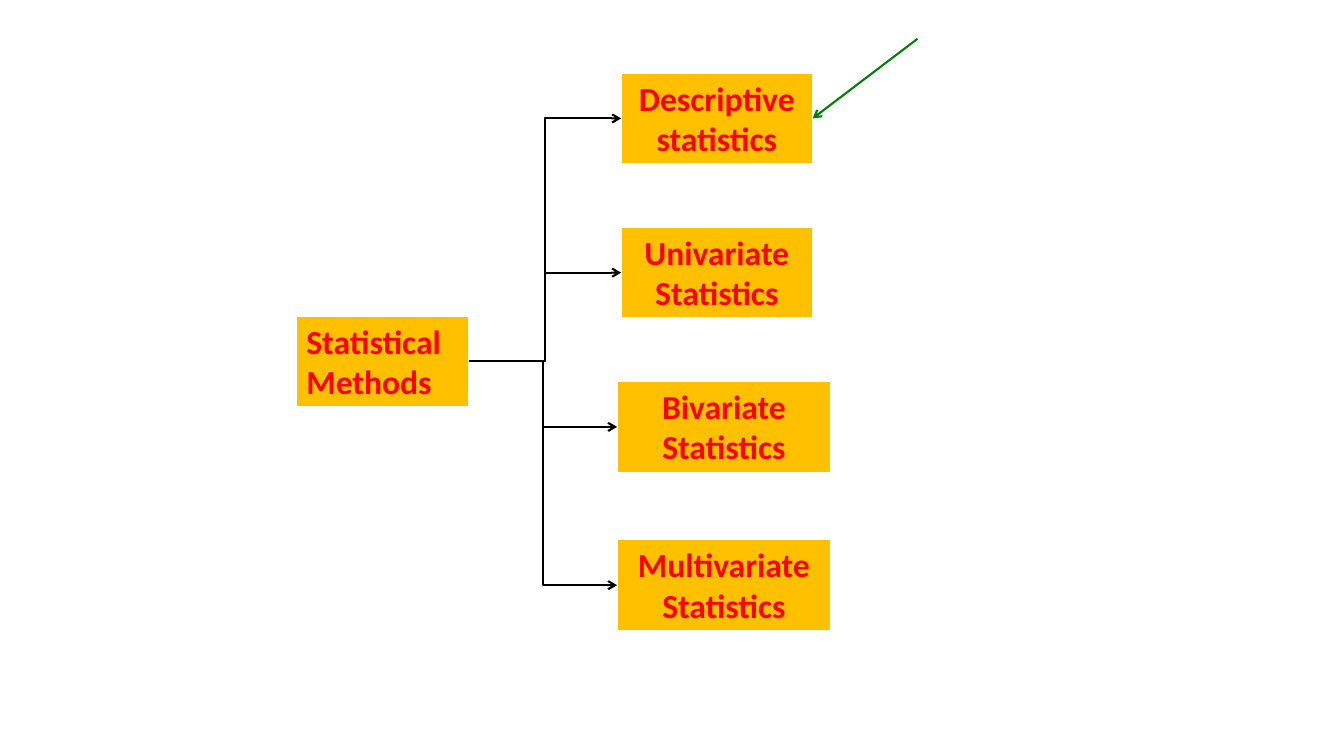
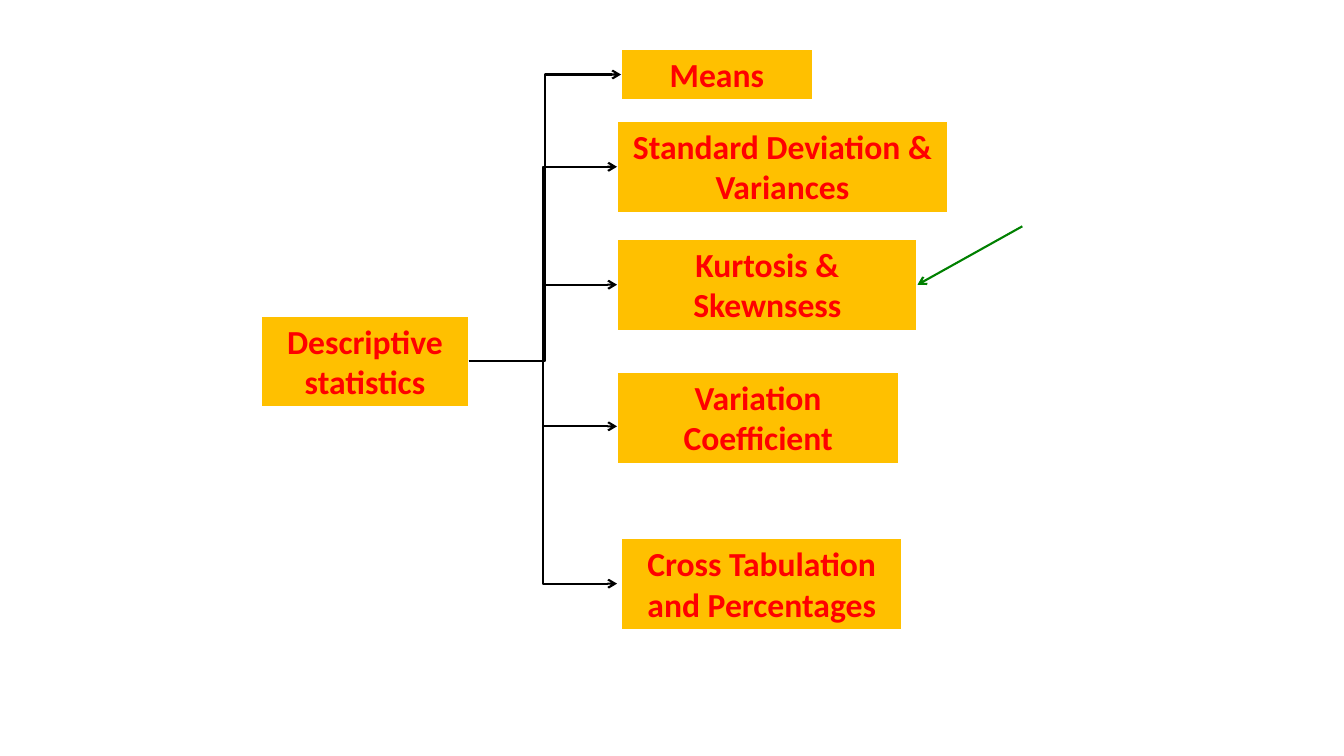
from dataclasses import dataclass
from typing import Optional

from lxml.etree import SubElement
from pptx import Presentation
from pptx.dml.color import RGBColor
from pptx.enum.shapes import MSO_CONNECTOR, MSO_SHAPE
from pptx.enum.text import MSO_ANCHOR, MSO_AUTO_SIZE, PP_ALIGN
from pptx.oxml.ns import qn
from pptx.util import Inches, Pt

AMBER, RED, WHITE, BLACK, GREEN = "FFC000", "FF0000", "FFFFFF", "000000", "008000"
TOP, LEFT, RIGHT = 0, 1, 3
LINE_WIDTH = Pt(1.5)
LABEL_FONT = {"name": "Calibri", "size": Pt(24), "bold": True}
LABEL_FRAME = {
    "word_wrap": True,
    "auto_size": MSO_AUTO_SIZE.SHAPE_TO_FIT_TEXT,
    "vertical_anchor": MSO_ANCHOR.TOP,
}


@dataclass
class Node:
    """A labelled box, with offsets from the corner of its tree."""
    label: str
    x: float
    y: float
    width: float
    height: float = 0.91
    align: PP_ALIGN = PP_ALIGN.CENTER
    tip: Optional[tuple] = None


def set_color(color_format, value):
    """Give a colour format a hex colour."""
    color_format.rgb = RGBColor.from_string(value)


def apply_format(target, values):
    """Set each attribute named in a dict of format values."""
    for name, value in values.items():
        setattr(target, name, value)


def add_node(slide, node, left, top):
    """Draw one labelled box of a tree whose corner is at left, top."""
    box = slide.shapes.add_shape(
        MSO_SHAPE.RECTANGLE, Inches(left + node.x), Inches(top + node.y),
        Inches(node.width), Inches(node.height))
    box.shadow.inherit = False
    box.fill.solid()
    set_color(box.fill.fore_color, AMBER)
    set_color(box.line.color, WHITE)
    box.line.width = LINE_WIDTH
    apply_format(box.text_frame, LABEL_FRAME)
    paragraph = box.text_frame.paragraphs[0]
    paragraph.alignment = node.align
    run = paragraph.add_run()
    run.text = node.label
    apply_format(run.font, LABEL_FONT)
    set_color(run.font.color, RED)
    return box


def add_arrow(slide, route, start, end, color):
    """Draw an open-headed arrow between two points given in EMU."""
    arrow = slide.shapes.add_connector(route, *start, *end)
    set_color(arrow.line.color, color)
    arrow.line.width = LINE_WIDTH
    properties = arrow.line._get_or_add_ln()
    SubElement(properties, qn("a:tailEnd"), type="arrow")
    SubElement(arrow._element.spPr, qn("a:effectLst"))
    return arrow


def side_middle(box, side):
    """Return the middle of a box's left or right side."""
    return box.left + (box.width if side == RIGHT else 0), box.top + box.height // 2


def add_branch(slide, root_box, branch_box, tip):
    """Lead an elbow arrow from the root to a branch, or to a free tip."""
    arrow = add_arrow(slide, MSO_CONNECTOR.ELBOW, side_middle(root_box, RIGHT),
                      tip or side_middle(branch_box, LEFT), BLACK)
    if tip is None:
        arrow.begin_connect(root_box, RIGHT)
        arrow.end_connect(branch_box, LEFT)


def add_pointer(slide, target_box, rise):
    """Point a green arrow at a box from its upper right."""
    x, y = side_middle(target_box, RIGHT)
    pointer = add_arrow(slide, MSO_CONNECTOR.STRAIGHT,
                        (x + Inches(1.04), y - Inches(rise)), (x, y), GREEN)
    pointer.end_connect(target_box, RIGHT)


def add_tree_slide(deck, corner, root, branches, marked, rise):
    """Add a slide with a root, its branches and a pointer to the marked one."""
    slide = deck.slides.add_slide(deck.slide_layouts[6])
    left, top = corner
    root_box = add_node(slide, root, left, top)
    branch_boxes = [add_node(slide, branch, left, top) for branch in branches]
    for branch, branch_box in zip(branches, branch_boxes):
        tip = branch.tip and (Inches(left + branch.tip[0]), Inches(top + branch.tip[1]))
        add_branch(slide, root_box, branch_box, tip)
    add_pointer(slide, branch_boxes[marked], rise)


METHODS = {
    "corner": (2.94, 0.72),
    "root": Node("Statistical Methods", 0, 2.41, 1.71, align=PP_ALIGN.LEFT),
    "branches": [
        Node("Descriptive statistics", 3.22, 0, 1.9),
        Node("Univariate Statistics", 3.22, 1.53, 1.9),
        Node("Bivariate Statistics", 3.18, 3.06, 2.12),
        Node("Multivariate Statistics", 3.18, 4.63, 2.12),
    ],
    "marked": 0,
    "rise": 0.79,
}
DESCRIPTIVE = {
    "corner": (2.59, 0.49),
    "root": Node("Descriptive statistics", 0, 2.64, 2.06),
    "branches": [
        Node("Means", 3.57, 0, 1.9, 0.5),
        Node("Standard Deviation & Variances", 3.53, 0.71, 3.28),
        Node("Kurtosis & Skewnsess", 3.53, 1.88, 2.98),
        Node("Variation Coefficient", 3.53, 3.2, 2.8, tip=(3.53, 3.74)),
        Node("Cross Tabulation and Percentages", 3.57, 4.85, 2.79, tip=(3.53, 5.3)),
    ],
    "marked": 2,
    "rise": 0.58,
}


def main():
    """Build and save the deck."""
    deck = Presentation()
    deck.slide_width, deck.slide_height = Inches(13.33), Inches(7.5)
    for tree in (METHODS, DESCRIPTIVE):
        add_tree_slide(deck, **tree)
    deck.save("out.pptx")


if __name__ == "__main__":
    main()
